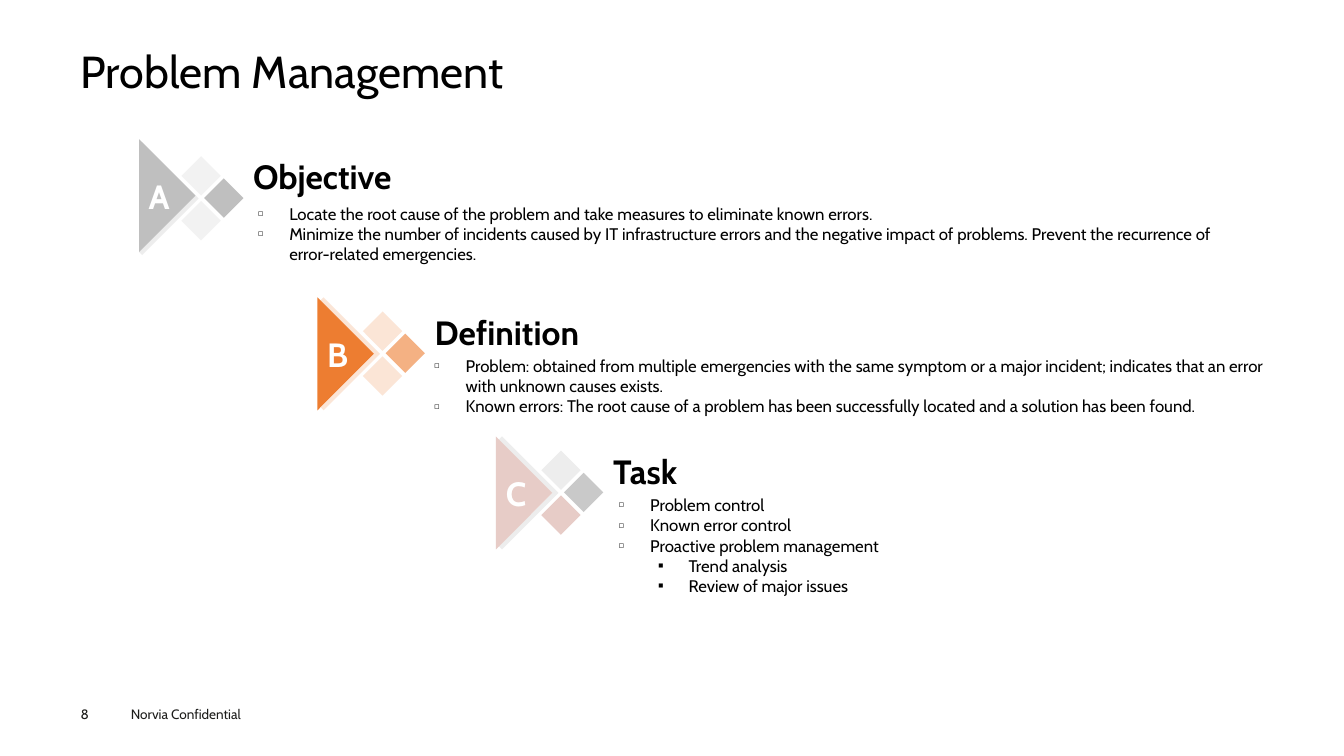
from typing import NamedTuple

from pptx import Presentation
from pptx.dml.color import RGBColor as Rgb
from pptx.enum.shapes import MSO_SHAPE as Shape
from pptx.enum.text import MSO_ANCHOR as Anchor, MSO_AUTO_SIZE as Auto, PP_ALIGN as Align
from pptx.oxml.ns import qn
from pptx.util import Inches, Pt
from lxml.etree import SubElement as Sub

# The slide is a grid of 80 columns by 45 rows of square cells.
WIDE, HIGH = Inches(13.333), Inches(7.5)
CELL = HIGH / 45
FONT = "Cabin"
HUE = {"black": "000000", "ink": "1D1D1B", "white": "FFFFFF",
       "mist": "F2F2F2", "pale": "EDEDED", "grey": "BFBFBF", "steel": "C9C9C9",
       "peach": "FBE5D6", "sand": "F4B183", "orange": "ED7D31", "rose": "E7CCC7"}


class Box(NamedTuple):
    col: float
    row: float
    wide: float
    high: float


class Level(NamedTuple):
    mark: str
    left: float
    hang: float


class Part(NamedTuple):
    letter: str
    name: str
    col: float
    row: float
    shift: float  # the triangle's offset, right and up
    main: str
    shade: str
    gems: tuple[str, str, str]
    area: Box
    items: tuple[tuple[int, str], ...]


LEVELS = (Level("◻", 0.31, 0.31), Level("■", 0.69, 0.3))
GEMS = ((2.7, 0.84), (2.7, 3.51), (4.05, 2.16))
GEM = 2.34
SHADE = ((0.36, 0), (3.72, 3.36), (0.36, 6.72), (0.18, 6.54), (3.36, 3.36), (0.18, 0.18))
WEDGE = ((0, 0), (3.36, 3.36), (0, 6.72))

PARTS = (
    Part("A", "Objective", 8.1, 8.46, 0.18, "grey", "pale", ("mist", "mist", "grey"),
         Box(14.76, 11.82, 59.34, 6.9), (
             (0, "Locate the root cause of the problem and take measures to eliminate "
                 "known errors."),
             (0, "Minimize the number of incidents caused by IT infrastructure errors and "
                 "the negative impact of problems. Prevent the recurrence of "
                 "error-related emergencies."))),
    Part("B", "Definition", 18.9, 17.7, 0, "orange", "peach", ("peach", "peach", "sand"),
         Box(25.26, 20.88, 51.66, 6.66), (
             (0, "Problem: obtained from multiple emergencies with the same symptom or a "
                 "major incident; indicates that an error with unknown causes exists."),
             (0, "Known errors: The root cause of a problem has been successfully located "
                 "and a solution has been found."))),
    Part("C", "Task", 29.52, 25.98, 0, "rose", "pale", ("pale", "rose", "steel"),
         Box(36.24, 29.16, 33.9, 6.9), (
             (0, "Problem control"),
             (0, "Known error control"),
             (0, "Proactive problem management"),
             (1, "Trend analysis"),
             (1, "Review of major issues"))),
)


def cells(num: float) -> int:
    return round(num * CELL)


def place(shape, box: Box) -> None:
    shape.left, shape.top, shape.width, shape.height = map(cells, box)


def write(para, text: str, *, size: float, hue: str = "black", bold: bool = False,
          align=Align.LEFT, line: float = 1.0) -> None:
    para.alignment, para.line_spacing = align, line
    para.space_before = para.space_after = Pt(0)
    run = para.add_run()
    run.text = text
    font = run.font
    font.name, font.size, font.bold = FONT, Pt(size), bold
    font.color.rgb = Rgb.from_string(HUE[hue])


def setup(frame, *, anchor=Anchor.TOP, pad: tuple[float, ...] = (0.1, 0.05, 0.1, 0.05)):
    """Fix a text frame's wrapping, anchor and insets; return its first paragraph."""
    frame.word_wrap, frame.auto_size = True, Auto.NONE
    frame.vertical_anchor = anchor
    (frame.margin_left, frame.margin_top,
     frame.margin_right, frame.margin_bottom) = map(Inches, pad)
    return frame.paragraphs[0]


def label(slide, box: Box):
    return slide.shapes.add_textbox(*map(cells, box)).text_frame


def paint(shape, hue: str) -> None:
    shape.shadow.inherit = False
    shape.fill.solid()
    shape.fill.fore_color.rgb = Rgb.from_string(HUE[hue])
    shape.line.fill.background()


def outline(slide, spots, col: float, row: float, hue: str):
    dots = [(cells(col + x), cells(row + y)) for x, y in spots]
    pen = slide.shapes.build_freeform(*dots[0])
    pen.add_line_segments(dots[1:], close=True)
    shape = pen.convert_to_shape()
    paint(shape, hue)
    return shape


def bullet(para, level: Level) -> None:
    props = para._p.get_or_add_pPr()
    props.set("marL", str(Inches(level.left)))
    props.set("indent", str(-Inches(level.hang)))
    Sub(props, qn("a:buSzPct"), val="50000")
    Sub(props, qn("a:buChar"), char=level.mark)


def fill_list(holder, part: Part) -> None:
    place(holder, part.area)
    frame = holder.text_frame
    para = setup(frame)
    for num, (depth, text) in enumerate(part.items):
        if num:
            para = frame.add_paragraph()
        para.level = depth
        bullet(para, LEVELS[depth])
        write(para, text, size=12)


def draw_part(slide, part: Part) -> None:
    for (x, y), hue in zip(GEMS, part.gems):
        box = Box(part.col + x, part.row + y, GEM, GEM)
        paint(slide.shapes.add_shape(Shape.DIAMOND, *map(cells, box)), hue)
    outline(slide, SHADE, part.col, part.row, part.shade)
    wedge = outline(slide, WEDGE, part.col + part.shift, part.row - part.shift, part.main)
    para = setup(wedge.text_frame, anchor=Anchor.MIDDLE, pad=(0, 0, 0.16, 0))
    write(para, part.letter, size=24, hue="white", bold=True, align=Align.CENTER)
    head = label(slide, Box(part.col + 6.38, part.row, 22.98, 3.54))
    write(setup(head, anchor=Anchor.BOTTOM), part.name, size=24, bold=True)


def main() -> None:
    deck = Presentation()
    deck.slide_width, deck.slide_height = WIDE, HIGH
    slide = deck.slides.add_slide(deck.slide_layouts.get_by_name("Comparison"))
    title, *lists, spare = slide.placeholders
    spare.element.getparent().remove(spare.element)

    place(title, Box(4.8, 2.94, 70.38, 3.24))
    write(setup(title.text_frame, pad=(0, 0, 0, 0)), "Problem Management", size=32, line=0.9)

    for part, holder in zip(PARTS, lists):
        draw_part(slide, part)
        fill_list(holder, part)

    foot = label(slide, Box(7.2, 41.7, 9.6, 1.62))
    write(setup(foot), "Norvia Confidential", size=9.7, hue="ink")
    page = label(slide, Box(4.8, 42, 3.3, 0.96))
    write(setup(page, pad=(0, 0, 0, 0)), "8", size=9.7, hue="ink")
    deck.save("out.pptx")


if __name__ == "__main__":
    main()
